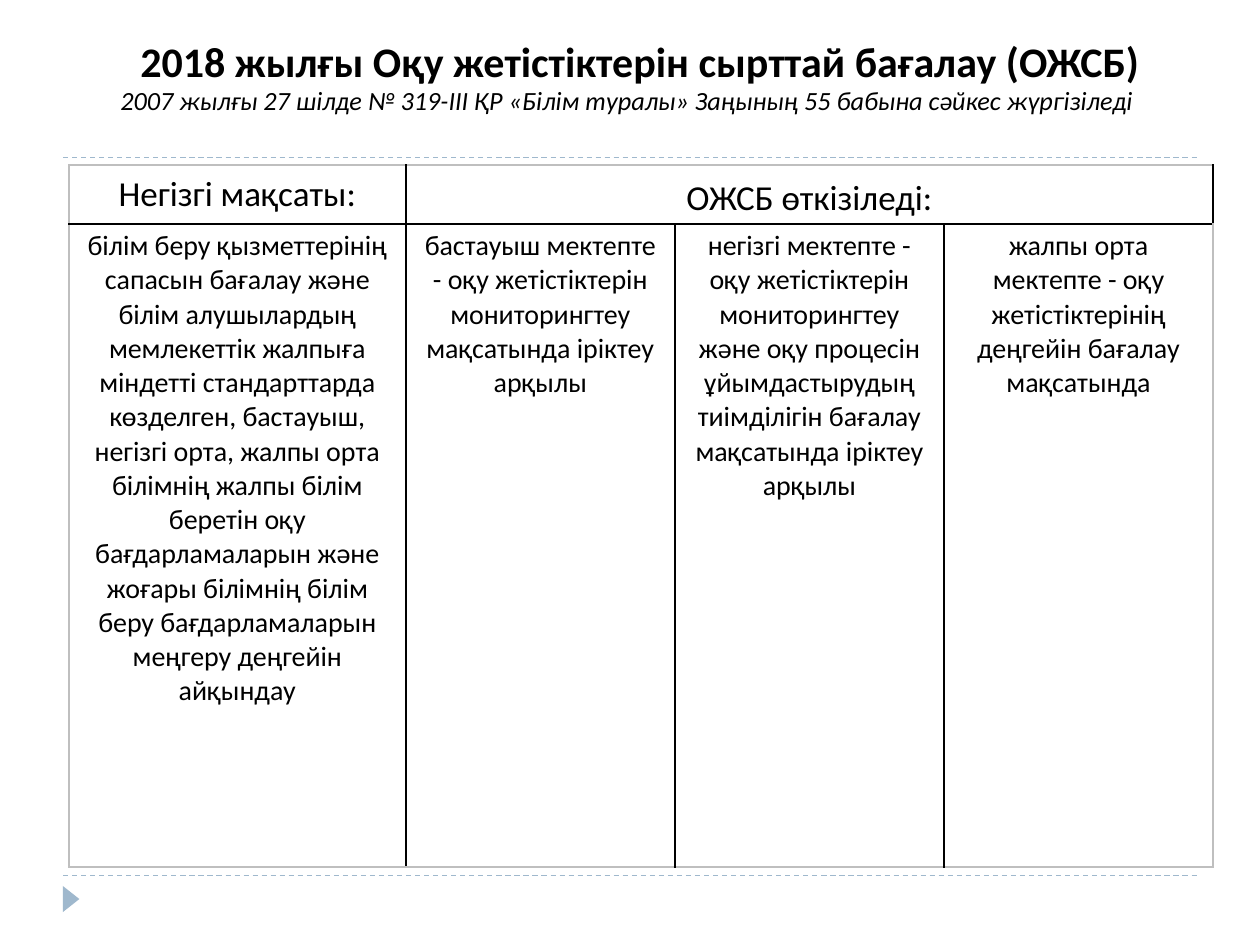
from dataclasses import dataclass
from lxml import etree
from pptx import Presentation
from pptx.dml.color import RGBColor as RGB
from pptx.enum.dml import MSO_LINE
from pptx.enum.shapes import MSO_CONNECTOR, MSO_SHAPE
from pptx.enum.text import MSO_ANCHOR, PP_ALIGN
from pptx.oxml.ns import qn
from pptx.util import Pt


@dataclass(frozen=True)
class Theme:
    font: str = "Calibri"
    ink: str = "000000"
    accent: str = "9FB8CD"
    frame: str = "BFBFBF"
    title: int = 24
    subtitle: int = 15
    header: int = 20
    body: int = 16


T = Theme()


def write(tf, text, size, bold=False, italic=False):
    """Fill the frame with one centred paragraph and return it."""
    tf.word_wrap = True
    p = tf.paragraphs[0]
    p.alignment = PP_ALIGN.CENTER
    r = p.add_run()
    r.text = text
    f = r.font
    f.name, f.size, f.bold, f.italic = T.font, Pt(size), bold, italic
    f.color.rgb = RGB.from_string(T.ink)
    return p


def set_border(cell, sides):
    """Draw the cell's edges; sides gives the colours of left, right, top, bottom."""
    tc_pr = cell._tc.get_or_add_tcPr()
    for i, (tag, color) in enumerate(zip(("lnL", "lnR", "lnT", "lnB"), sides)):
        ln = etree.Element(qn(f"a:{tag}"), w=str(Pt(1)))
        fill = etree.SubElement(ln, qn("a:solidFill"))
        etree.SubElement(fill, qn("a:srgbClr"), val=color)
        tc_pr.insert(i, ln)


prs = Presentation()
prs.slide_width, prs.slide_height = Pt(720), Pt(540)
s = prs.slides.add_slide(prs.slide_layouts[6])

# Dashed rules and the corner marker
for y in (500.4, 90):
    rule = s.shapes.add_connector(MSO_CONNECTOR.STRAIGHT, Pt(36), Pt(y), Pt(684), Pt(y))
    rule.line.color.rgb = RGB.from_string(T.accent)
    rule.line.width = Pt(0.75)
    rule.line.dash_style = MSO_LINE.DASH
    etree.SubElement(rule._element.spPr, qn("a:effectLst"))

marker = s.shapes.add_shape(MSO_SHAPE.ISOSCELES_TRIANGLE, Pt(33.1), Pt(509), Pt(15), Pt(9.5))
marker.rotation = 90
marker.shadow.inherit = False
marker.fill.solid()
marker.fill.fore_color.rgb = RGB.from_string(T.accent)
marker.line.fill.background()

# Headings
title = s.shapes.add_textbox(Pt(39.6), Pt(16.6), Pt(652.3), Pt(60.5))
write(title.text_frame, "2018 жылғы Оқу жетістіктерін сырттай бағалау (ОЖСБ)", T.title, bold=True)
subtitle = s.shapes.add_textbox(Pt(28), Pt(44.6), Pt(664), Pt(25.2))
write(subtitle.text_frame,
      "2007 жылғы 27 шілде № 319-III ҚР «Білім туралы» Заңының 55 бабына сәйкес жүргізіледі ",
      T.subtitle, italic=True)

# Table
HEADERS = ["Негізгі мақсаты:", "ОЖСБ өткізіледі:"]
BODY = [
    "білім беру қызметтерінің сапасын бағалау және білім алушылардың мемлекеттік жалпыға "
    "міндетті стандарттарда көзделген, бастауыш, негізгі орта, жалпы орта білімнің жалпы "
    "білім беретін оқу бағдарламаларын және жоғары білімнің білім беру бағдарламаларын "
    "меңгеру деңгейін айқындау",
    "бастауыш мектепте - оқу жетістіктерін мониторингтеу мақсатында іріктеу арқылы",
    "негізгі мектепте - оқу жетістіктерін мониторингтеу және оқу процесін ұйымдастырудың "
    "тиімділігін бағалау мақсатында іріктеу арқылы",
    "жалпы орта мектепте - оқу жетістіктерінің деңгейін бағалау мақсатында",
]
WIDTHS = [192.5, 153.8, 153.8, 153.8]
HEIGHTS = [33, 367.5]

table = s.shapes.add_table(2, 4, Pt(39.4), Pt(94.3), Pt(sum(WIDTHS)), Pt(sum(HEIGHTS))).table
table.first_row = table.horz_banding = False
for column, width in zip(table.columns, WIDTHS):
    column.width = Pt(width)
for row, height in zip(table.rows, HEIGHTS):
    row.height = Pt(height)
table.cell(0, 1).merge(table.cell(0, 3))

for r_i, texts in enumerate((HEADERS, BODY)):
    for c_i in range(4):
        cell = table.cell(r_i, c_i)
        cell.fill.background()
        cell.margin_left = cell.margin_right = Pt(7.2)
        cell.margin_top = cell.margin_bottom = Pt(3)
        cell.vertical_anchor = MSO_ANCHOR.TOP if r_i else MSO_ANCHOR.MIDDLE
        outer = (c_i == 0, c_i == 3, r_i == 0, r_i == 1)
        set_border(cell, [T.frame if edge else T.ink for edge in outer])
        if c_i < len(texts):
            p = write(cell.text_frame, texts[c_i], T.body if r_i else T.header)
            if (r_i, c_i) == (0, 1):
                p.line_spacing = 1.15

prs.save("out.pptx")
